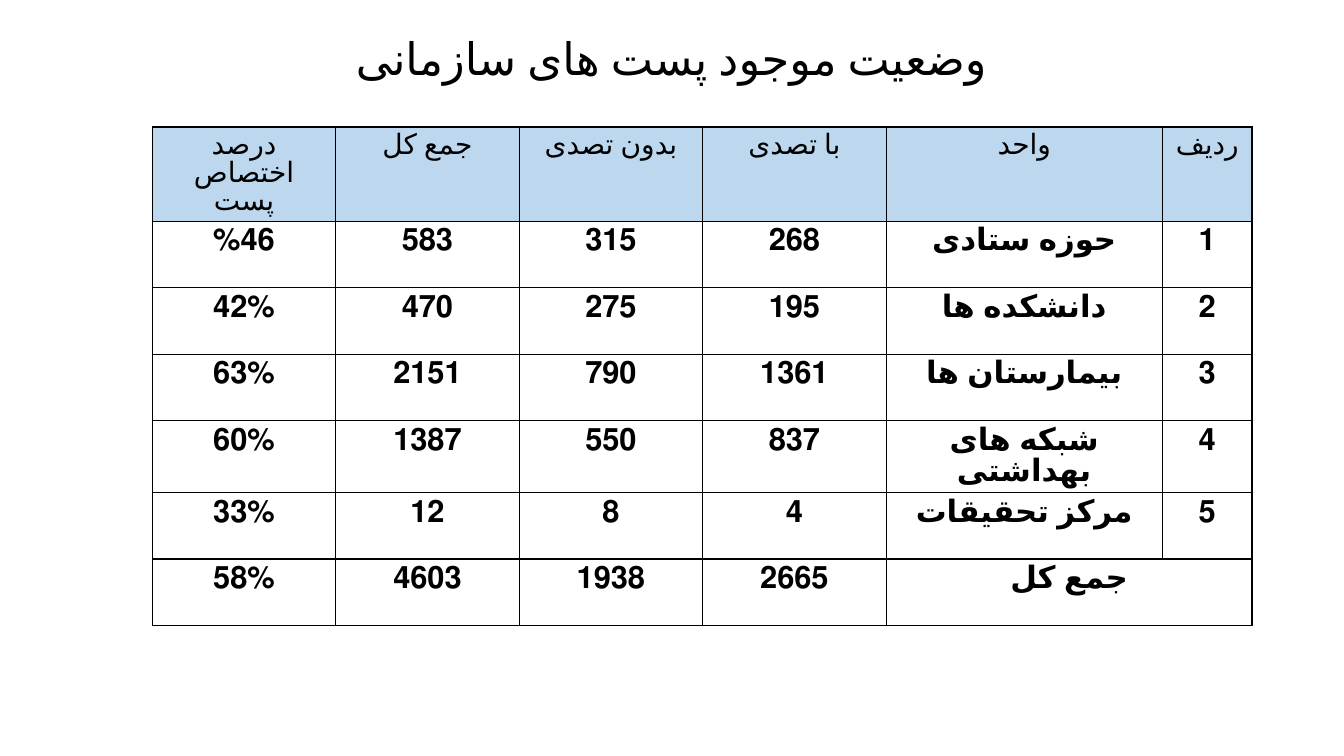
"""Build a right-to-left slide with a table of organizational posts."""
from dataclasses import dataclass

from lxml.etree import SubElement
from pptx import Presentation
from pptx.dml.color import RGBColor
from pptx.enum.text import MSO_ANCHOR, PP_ALIGN
from pptx.oxml.ns import qn
from pptx.util import Inches, Pt


@dataclass(frozen=True)
class Theme:
    font: str = "Calibri"
    ink: str = "000000"
    header_fill: str = "BDD7EE"
    title_size: int = 32
    header_size: int = 20
    body_size: int = 22
    border_width: int = 1


theme = Theme()


def write(frame, text, size, spacing, bold=False):
    """Put one centred right-to-left paragraph into a text frame."""
    paragraph = frame.paragraphs[0]
    paragraph.alignment = PP_ALIGN.CENTER
    paragraph.line_spacing = spacing
    paragraph._p.get_or_add_pPr().set("rtl", "1")
    run = paragraph.add_run()
    run.text = text
    run.font.name = theme.font
    run.font.size = Pt(size)
    run.font.bold = bold
    run.font.color.rgb = RGBColor.from_string(theme.ink)
    run._r.get_or_add_rPr().set("lang", "fa-IR")


def outline(cell):
    """Draw a solid line on all four sides of a cell."""
    properties = cell._tc.get_or_add_tcPr()
    for position, side in enumerate(("a:lnL", "a:lnR", "a:lnT", "a:lnB")):
        line = SubElement(properties, qn(side), w=str(Pt(theme.border_width)))
        properties.insert(position, line)
        fill = SubElement(line, qn("a:solidFill"))
        SubElement(fill, qn("a:srgbClr"), val=theme.ink)


presentation = Presentation()
presentation.slide_width = Inches(13.33)
presentation.slide_height = Inches(7.5)
slide = presentation.slides.add_slide(presentation.slide_layouts[6])

title = slide.shapes.add_textbox(Inches(0.91), Inches(0.26), Inches(11.5), Inches(0.69))
title.text_frame.word_wrap = True
title.text_frame.vertical_anchor = MSO_ANCHOR.MIDDLE
write(title.text_frame, "وضعیت موجود پست های سازمانی", theme.title_size, 0.9)

posts = [
    ("درصد اختصاص پست", "جمع کل", "بدون تصدی", "با تصدی", "واحد", "ردیف"),
    ("%46", "583", "315", "268", "حوزه ستادی", "1"),
    ("42%", "470", "275", "195", "دانشکده ها", "2"),
    ("63%", "2151", "790", "1361", "بیمارستان ها", "3"),
    ("60%", "1387", "550", "837", "شبکه های بهداشتی", "4"),
    ("33%", "12", "8", "4", "مرکز تحقیقات", "5"),
    ("58%", "4603", "1938", "2665", "جمع کل", ""),
]
column_widths = [1.82] * 4 + [2.74, 0.89]
row_heights = [0.76] + [0.66] * 6

table = slide.shapes.add_table(
    len(posts), len(column_widths), Inches(1.51), Inches(1.26),
    Inches(sum(column_widths)), Inches(sum(row_heights)),
).table
for column, width in zip(table.columns, column_widths):
    column.width = Inches(width)
for row, height in zip(table.rows, row_heights):
    row.height = Inches(height)
table.cell(6, 4).merge(table.cell(6, 5))

for row_index, entries in enumerate(posts):
    is_header = row_index == 0
    size = theme.header_size if is_header else theme.body_size
    for column_index, entry in enumerate(entries):
        cell = table.cell(row_index, column_index)
        if is_header:
            cell.fill.solid()
            cell.fill.fore_color.rgb = RGBColor.from_string(theme.header_fill)
        else:
            cell.fill.background()
        outline(cell)
        if entry:
            write(cell.text_frame, entry, size, Pt(size), bold=not is_header)

presentation.save("out.pptx")
